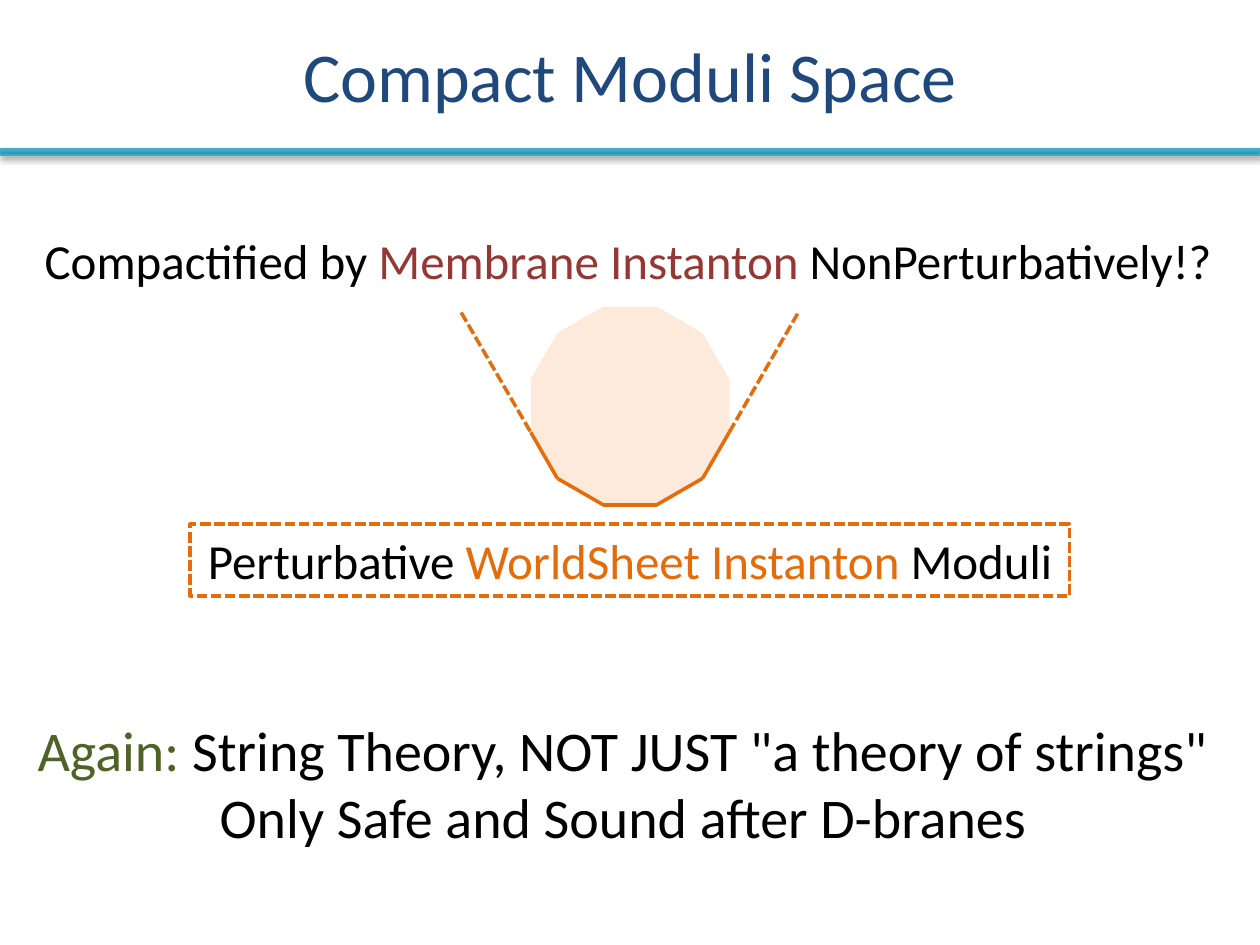
from math import cos, pi, radians, sin
from itertools import pairwise

from lxml.etree import SubElement
from pptx import Presentation
from pptx.dml.color import RGBColor
from pptx.enum.dml import MSO_LINE
from pptx.enum.shapes import MSO_CONNECTOR, MSO_SHAPE
from pptx.enum.text import MSO_ANCHOR, MSO_AUTO_SIZE, PP_ALIGN
from pptx.oxml import parse_xml
from pptx.oxml.ns import nsdecls, qn
from pptx.util import Inches, Pt

COLS, ROWS = 100, 75
BLACK, NAVY, ORANGE, PEACH = "000000", "1F497D", "E46C0A", "FDEADA"
RED, GREEN, TEAL = "953735", "4F6228", "46AAC5"
LEFT, CENTER = PP_ALIGN.LEFT, PP_ALIGN.CENTER


def rgb(color):
    return RGBColor.from_string(color)


def write(sp, *lines, size, aligns=(CENTER,), wrap=True, grow=True, anchor=MSO_ANCHOR.TOP):
    """Fill sp with lines, each a list of (text, colour) runs."""
    tf = sp.text_frame
    tf.word_wrap = wrap
    tf.auto_size = MSO_AUTO_SIZE.SHAPE_TO_FIT_TEXT if grow else MSO_AUTO_SIZE.NONE
    tf.vertical_anchor = anchor
    for i, (runs, align) in enumerate(zip(lines, aligns)):
        p = tf.add_paragraph() if i else tf.paragraphs[0]
        p.alignment = align
        for text, color in runs:
            r = p.add_run()
            r.text = text
            r.font.name, r.font.size = "Calibri", Pt(size)
            r.font.color.rgb = rgb(color)


class Deck:
    """Places elements on the current slide by columns and rows of a grid."""

    def __init__(self):
        self.prs = Presentation()
        self.prs.slide_width, self.prs.slide_height = Inches(10), Inches(7.5)
        self.s = self.prs.slides.add_slide(self.prs.slide_layouts[6])

    def x(self, col):
        return round(self.prs.slide_width * col / COLS)

    def y(self, row):
        return round(self.prs.slide_height * row / ROWS)

    def box(self, col, row, cols, rows):
        return self.x(col), self.y(row), self.x(cols), self.y(rows)

    def stroke(self, line, color=ORANGE, width=2, dashed=False):
        line.color.rgb, line.width = rgb(color), Pt(width)
        if dashed:
            line.dash_style = MSO_LINE.SQUARE_DOT

    def shape(self, kind, *place, fill=None, line=None, **style):
        sp = self.s.shapes.add_shape(kind, *self.box(*place))
        sp.shadow.inherit = False
        if fill:
            sp.fill.solid()
            sp.fill.fore_color.rgb = rgb(fill)
        else:
            sp.fill.background()
        if line:
            self.stroke(sp.line, line, **style)
        else:
            sp.line.fill.background()
        return sp

    def bar(self, *place):
        """Teal rule with an upward gradient and a soft shadow below."""
        sp = self.shape(MSO_SHAPE.RECTANGLE, *place, line=TEAL, width=0.75)
        stops = "".join(
            f'<a:gs pos="{pos}000"><a:srgbClr val="{color}"/></a:gs>'
            for pos, color in ((0, "2A88A2"), (80, "37B1D2"), (100, "34B4D6")))
        pr = sp.element.spPr
        pr.replace(pr.find(qn("a:noFill")), parse_xml(
            f'<a:gradFill {nsdecls("a")} rotWithShape="1"><a:gsLst>{stops}</a:gsLst>'
            '<a:lin ang="16200000" scaled="0"/></a:gradFill>'))
        pr.find(qn("a:effectLst")).append(parse_xml(
            f'<a:outerShdw {nsdecls("a")} blurRad="{Pt(3.1)}" dist="{Pt(1.8)}" '
            'dir="5400000" rotWithShape="0"><a:srgbClr val="000000">'
            '<a:alpha val="35000"/></a:srgbClr></a:outerShdw>'))

    def text(self, *place, lines, **style):
        write(self.s.shapes.add_textbox(*self.box(*place)), *lines, **style)

    def line(self, start, end, **style):
        c = self.s.shapes.add_connector(
            MSO_CONNECTOR.STRAIGHT, self.x(start[0]), self.y(start[1]),
            self.x(end[0]), self.y(end[1]))
        self.stroke(c.line, **style)
        SubElement(c.element.spPr, qn("a:effectLst"))


def main():
    deck = Deck()
    deck.bar(0, 11.8, COLS, 0.5)
    deck.text(0, 0, COLS, 11.8, lines=[[("Compact Moduli Space", NAVY)]],
              size=40, grow=False, anchor=MSO_ANCHOR.MIDDLE)

    cx, cy, width = COLS / 2, 32.2, 15.75
    radius = width / 2 / cos(pi / 12)
    deck.shape(MSO_SHAPE.DODECAGON, cx - width / 2, cy - width / 2, width, width,
               fill=PEACH)
    lower_corners = [(cx + radius * cos(radians(a)), cy + radius * sin(radians(a)))
                     for a in range(15, 166, 30)]
    deck.line((36.6, 24.8), lower_corners[-1], dashed=True)
    deck.line(lower_corners[0], (63.3, 24.9), dashed=True)

    sp = deck.shape(MSO_SHAPE.RECTANGLE, 15.1, 41.6, 69.8, 5.7,
                    line=ORANGE, dashed=True)
    write(sp, [("Perturbative ", BLACK), ("WorldSheet Instanton ", ORANGE),
               ("Moduli", BLACK)], size=28)
    deck.text(2, 17.8, 95.7, 5.7, size=28, wrap=False, lines=[
        [("Compactified by ", BLACK), ("Membrane Instanton ", RED),
         ("NonPerturbatively!?", BLACK)]])
    deck.text(2, 56.3, 95.9, 11.8, size=32, wrap=False, aligns=(LEFT, CENTER), lines=[
        [("Again:", GREEN), (' String Theory, NOT JUST "a theory of strings"', BLACK)],
        [("Only Safe and Sound after D-branes", BLACK)]])

    for start, end in pairwise(lower_corners):
        deck.line(start, end)
    deck.prs.save("out.pptx")


if __name__ == "__main__":
    main()
